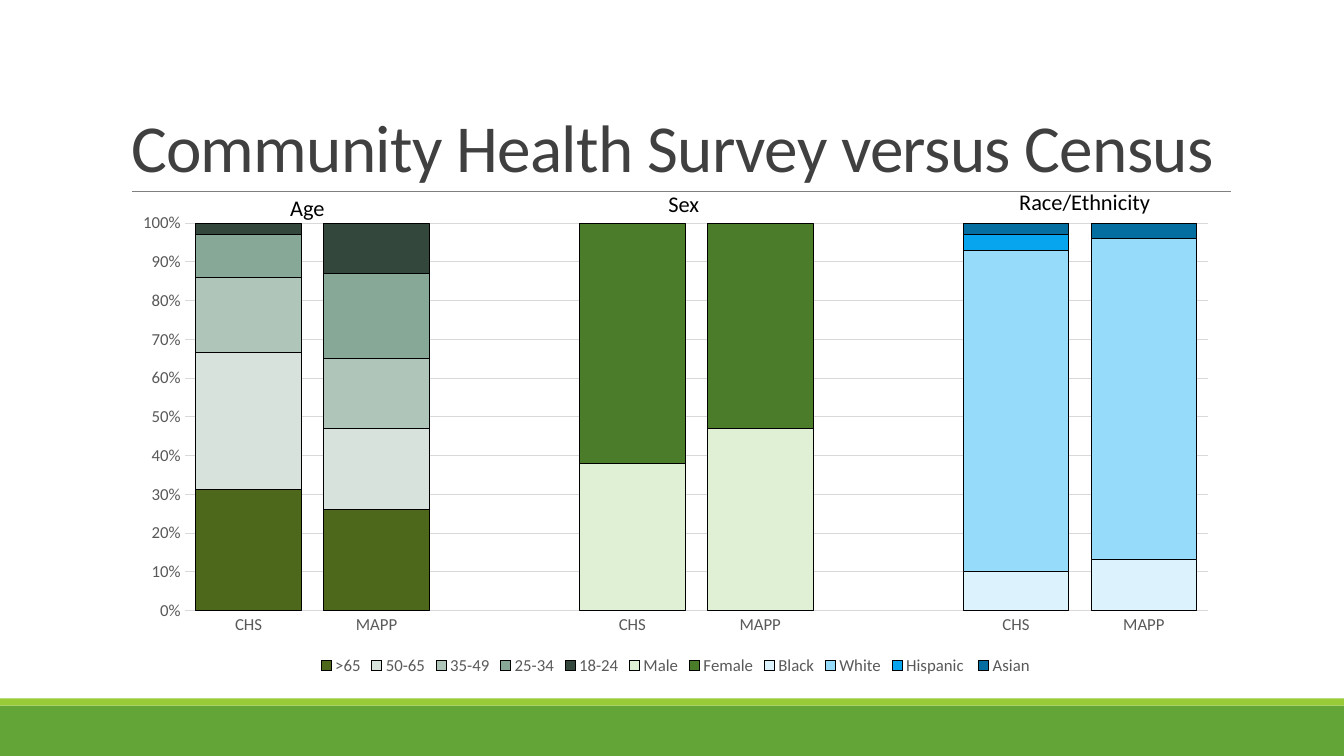
import pptx
import pptx.util
import pptx.chart.data
import pptx.dml.color
import pptx.enum.chart
import pptx.enum.shapes
import pptx.enum.text
import lxml.etree

Inches = pptx.util.Inches
Pt = pptx.util.Pt
FONT = "Calibri"
TINT = {
    "band": "63A537", "strip": "99CB38", "rule": "808080", "title": "404040",
    "text": "000000", "axis": "595959", "grid": "D9D9D9",
    ">65": "4D671B", "50-65": "D7E2DC", "35-49": "AFC5B9", "25-34": "87A896",
    "18-24": "34473D", "Male": "DFF0D4", "Female": "4A7C29", "Black": "DCF3FE",
    "White": "97DBFB", "Hispanic ": "08A5EF", "Asian": "056EA0",
}


def color(name):
    return pptx.dml.color.RGBColor.from_string(TINT[name])


def style(font, size, name):
    font.name = FONT
    font.size = Pt(size)
    font.color.rgb = color(name)


deck = pptx.Presentation()
deck.slide_width = Inches(13.33)
deck.slide_height = Inches(7.5)
slide = deck.slides.add_slide(deck.slide_layouts[5])

for name, top, height in [("band", 7, 0.5), ("strip", 6.93, 0.07)]:
    bar = slide.shapes.add_shape(
        pptx.enum.shapes.MSO_SHAPE.RECTANGLE,
        0, Inches(top), deck.slide_width, Inches(height))
    bar.shadow.inherit = False
    bar.fill.solid()
    bar.fill.fore_color.rgb = color(name)
    bar.line.fill.background()

rule = slide.shapes.add_connector(
    pptx.enum.shapes.MSO_CONNECTOR.STRAIGHT,
    Inches(1.31), Inches(1.9), Inches(12.21), Inches(1.9))
rule.line.color.rgb = color("rule")
rule.line.width = Pt(0.5)
lxml.etree.SubElement(
    rule._element.spPr, pptx.oxml.ns.qn("a:effectLst"))

title = slide.shapes.title
title.left, title.top = Inches(1.2), Inches(0.31)
title.width, title.height = Inches(11), Inches(1.59)
frame = title.text_frame
frame.auto_size = pptx.enum.text.MSO_AUTO_SIZE.NONE
frame.vertical_anchor = pptx.enum.text.MSO_ANCHOR.BOTTOM
para = frame.paragraphs[0]
para.alignment = pptx.enum.text.PP_ALIGN.LEFT
para.line_spacing = 0.85
run = para.add_run()
run.text = "Community Health Survey versus Census"
style(run.font, 48, "title")
run.font._element.set("spc", "-50")

groups = [
    [(">65", 31, 26), ("50-65", 35, 21), ("35-49", 19, 18),
     ("25-34", 11, 22), ("18-24", 3, 13)],
    [("Male", 38, 47), ("Female", 62, 53)],
    [("Black", 10, 13), ("White", 83, 82), ("Hispanic ", 4, None),
     ("Asian", 3, 4)],
]
data = pptx.chart.data.CategoryChartData()
data.categories = ["CHS", "MAPP", "", "CHS", "MAPP", "", "CHS", "MAPP"]
for place, group in enumerate(groups):
    for name, survey, census in group:
        vals = [None] * 8
        vals[place * 3:place * 3 + 2] = [survey, census]
        data.add_series(name, vals)

chart = slide.shapes.add_chart(
    pptx.enum.chart.XL_CHART_TYPE.COLUMN_STACKED_100,
    Inches(1.2), Inches(2.02), Inches(11), Inches(4.72), data).chart
style(chart.font, 10, "text")
chart.has_title = False
chart.has_legend = True
chart.legend.position = pptx.enum.chart.XL_LEGEND_POSITION.BOTTOM
chart.legend.include_in_layout = False
style(chart.legend.font, 12, "axis")

plot = chart.plots[0]
plot.vary_by_categories = False
plot.gap_width = 21
plot.overlap = 100
for item in plot.series:
    item.format.fill.solid()
    item.format.fill.fore_color.rgb = color(item.name)
    item.format.line.color.rgb = color("text")
    item.format.line.width = Pt(0.75)

cats, scale = chart.category_axis, chart.value_axis
for axis in (cats, scale):
    axis.major_tick_mark = pptx.enum.chart.XL_TICK_MARK.NONE
    axis.minor_tick_mark = pptx.enum.chart.XL_TICK_MARK.NONE
    style(axis.tick_labels.font, 12, "axis")
scale.has_major_gridlines = True
scale.format.line.fill.background()
scale.tick_labels.number_format = "0%"
scale.tick_labels.number_format_is_linked = False
for line in (cats.format.line, scale.major_gridlines.format.line):
    line.color.rgb = color("grid")
    line.width = Pt(0.75)

for text, left, top, width in [
        ("Age", 2.78, 1.88, 0.61),
        ("Sex", 6.53, 1.84, 0.54),
        ("Race/Ethnicity", 10.01, 1.82, 1.81)]:
    box = slide.shapes.add_textbox(
        Inches(left), Inches(top), Inches(width), Inches(0.37))
    box.text_frame.word_wrap = True
    box.text_frame.auto_size = pptx.enum.text.MSO_AUTO_SIZE.SHAPE_TO_FIT_TEXT
    run = box.text_frame.paragraphs[0].add_run()
    run.text = text
    style(run.font, 16, "text")

deck.save("out.pptx")
